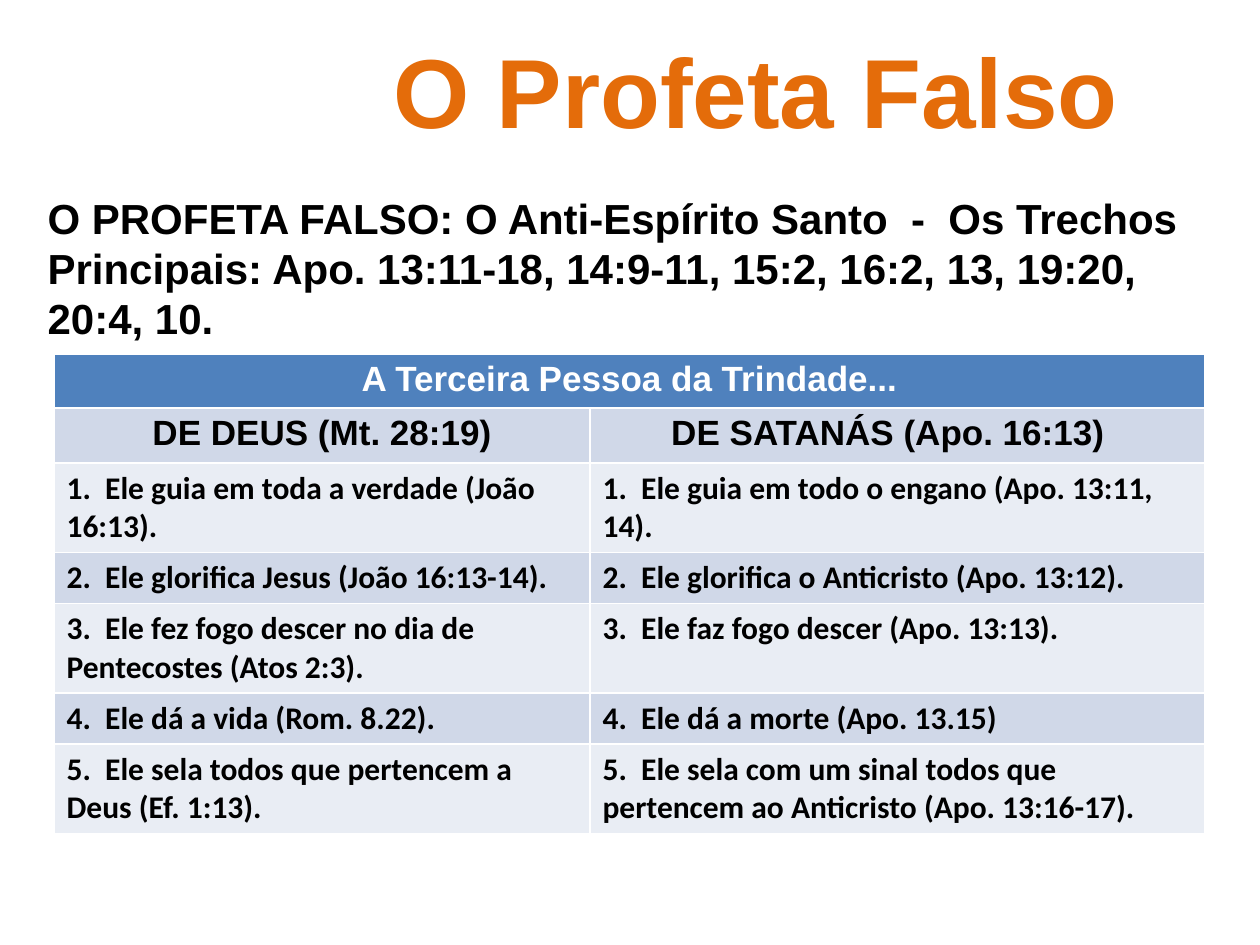
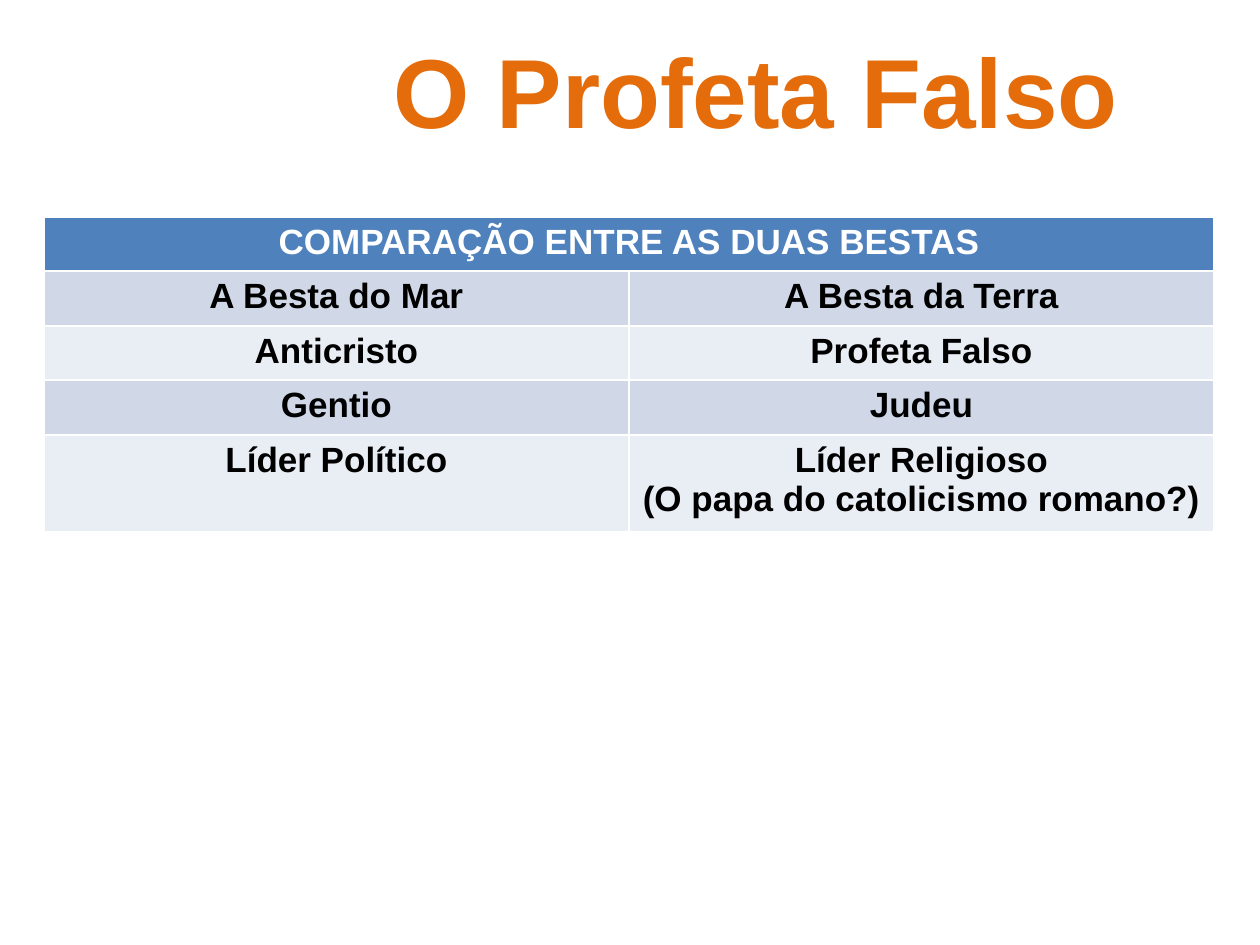
"""Build two slides that compare the False Prophet with the Holy Spirit and with the Antichrist."""
from lxml import etree
from pptx import Presentation
from pptx.dml.color import RGBColor
from pptx.enum.text import MSO_ANCHOR, MSO_AUTO_SIZE, PP_ALIGN
from pptx.oxml.ns import qn
from pptx.util import Emu, Pt

CENTER, LEFT = PP_ALIGN.CENTER, PP_ALIGN.LEFT
TOP, MIDDLE = MSO_ANCHOR.TOP, MSO_ANCHOR.MIDDLE
NO_AUTOFIT = MSO_AUTO_SIZE.NONE
PX = 914400 / 126

ORANGE, BLACK, WHITE = "E46C0A", "000000", "FFFFFF"
HEADER_BLUE, BAND_DARK, BAND_LIGHT = "4F81BD", "D0D8E8", "E9EDF4"

TITLE_FORMAT = {"name": "Arial", "size": Pt(56), "bold": True}
INTRO_FORMAT = {"name": "Arial", "size": Pt(24), "bold": True}
HEADING_FORMAT = {"name": "Arial", "size": Pt(20), "bold": True}
LIST_FORMAT = {"name": "Calibri", "size": Pt(18), "bold": True}


def px(length):
    """Turn pixels into EMU."""
    return Emu(round(length * PX))


def format_text(text_frame, font_format, color, alignment):
    """Give every paragraph of a text frame the same font, colour and alignment."""
    for paragraph in text_frame.paragraphs:
        paragraph.alignment = alignment
        for run in paragraph.runs:
            for attribute, value in font_format.items():
                setattr(run.font, attribute, value)
            run.font.color.rgb = RGBColor.from_string(color)


SLIDES = [
    {
        "layout": 1,
        "intro": "O PROFETA FALSO: O Anti-Espírito Santo  -  Os Trechos Principais: "
                 "Apo. 13:11-18, 14:9-11, 15:2, 16:2, 13, 19:20, 20:4, 10.",
        "table_at": (54, 354),
        "column_widths": (536, 615),
        "row_heights": (54, 55, 88, 51, 88, 51, 89),
        "heading_rows": 2,
        "rows": [
            ("A Terceira Pessoa da Trindade...", ""),
            ("DE DEUS (Mt. 28:19)", "DE SATANÁS (Apo. 16:13)"),
            ("1.  Ele guia em toda a verdade (João 16:13).",
             "1.  Ele guia em todo o engano (Apo. 13:11, 14)."),
            ("2.  Ele glorifica Jesus (João 16:13-14).",
             "2.  Ele glorifica o Anticristo (Apo. 13:12)."),
            ("3.  Ele fez fogo descer no dia de Pentecostes (Atos 2:3).",
             "3.  Ele faz fogo descer (Apo. 13:13)."),
            ("4.  Ele dá a vida (Rom. 8.22).", "4.  Ele dá a morte (Apo. 13.15)"),
            ("5.  Ele sela todos que pertencem a Deus (Ef. 1:13).",
             "5.  Ele sela com um sinal todos que pertencem ao Anticristo (Apo. 13:16-17)."),
        ],
    },
    {
        "layout": 5,
        "intro": None,
        "table_at": (44, 217),
        "column_widths": (585, 585),
        "row_heights": (54, 55, 54, 55, 97),
        "heading_rows": 5,
        "rows": [
            ("COMPARAÇÃO ENTRE AS DUAS BESTAS", ""),
            ("A Besta do Mar", "A Besta da Terra"),
            ("Anticristo", "Profeta Falso"),
            ("Gentio", "Judeu"),
            ("Líder Político", "Líder Religioso\n(O papa do catolicismo romano?)"),
        ],
    },
]

presentation = Presentation()
presentation.slide_width, presentation.slide_height = px(1260), px(945)

for content in SLIDES:
    slide = presentation.slides.add_slide(presentation.slide_layouts[content["layout"]])

    title = slide.shapes.title
    title.left, title.top, title.width, title.height = px(287), px(24), px(938), px(131)
    title.text_frame.text = "O Profeta Falso"
    title.text_frame.vertical_anchor = MIDDLE
    format_text(title.text_frame, TITLE_FORMAT, ORANGE, CENTER)

    if content["intro"]:
        body = slide.placeholders[1]
        body.left, body.top, body.width, body.height = px(35), px(187), px(1191), px(624)
        body.text_frame.text = content["intro"]
        body.text_frame.auto_size = NO_AUTOFIT
        body.text_frame.vertical_anchor = TOP
        paragraph = body.text_frame.paragraphs[0]
        properties = paragraph._p.get_or_add_pPr()
        properties.set("marL", "0")
        properties.set("indent", "0")
        etree.SubElement(properties, qn("a:buNone"))
        paragraph.space_before = Pt(0)
        paragraph.line_spacing = Pt(28.5)
        format_text(body.text_frame, INTRO_FORMAT, BLACK, LEFT)

    rows, widths, heights = content["rows"], content["column_widths"], content["row_heights"]
    left, top = content["table_at"]
    table = slide.shapes.add_table(
        len(rows), len(widths), px(left), px(top), px(sum(widths)), px(sum(heights))
    ).table
    for column, width in zip(table.columns, widths):
        column.width = px(width)
    for row, height in zip(table.rows, heights):
        row.height = px(height)
    table.cell(0, 0).merge(table.cell(0, 1))

    for row_index, texts in enumerate(rows):
        is_heading = row_index < content["heading_rows"]
        band = BAND_DARK if row_index % 2 else BAND_LIGHT
        for column_index, text in enumerate(texts):
            cell = table.cell(row_index, column_index)
            cell.fill.solid()
            cell.fill.fore_color.rgb = RGBColor.from_string(band if row_index else HEADER_BLUE)
            if text:
                cell.text_frame.text = text
            format_text(
                cell.text_frame,
                HEADING_FORMAT if is_heading else LIST_FORMAT,
                BLACK if row_index else WHITE,
                CENTER if is_heading else LEFT,
            )

    if content["intro"]:
        table.cell(1, 1).margin_right = px(32)

presentation.save("out.pptx")
